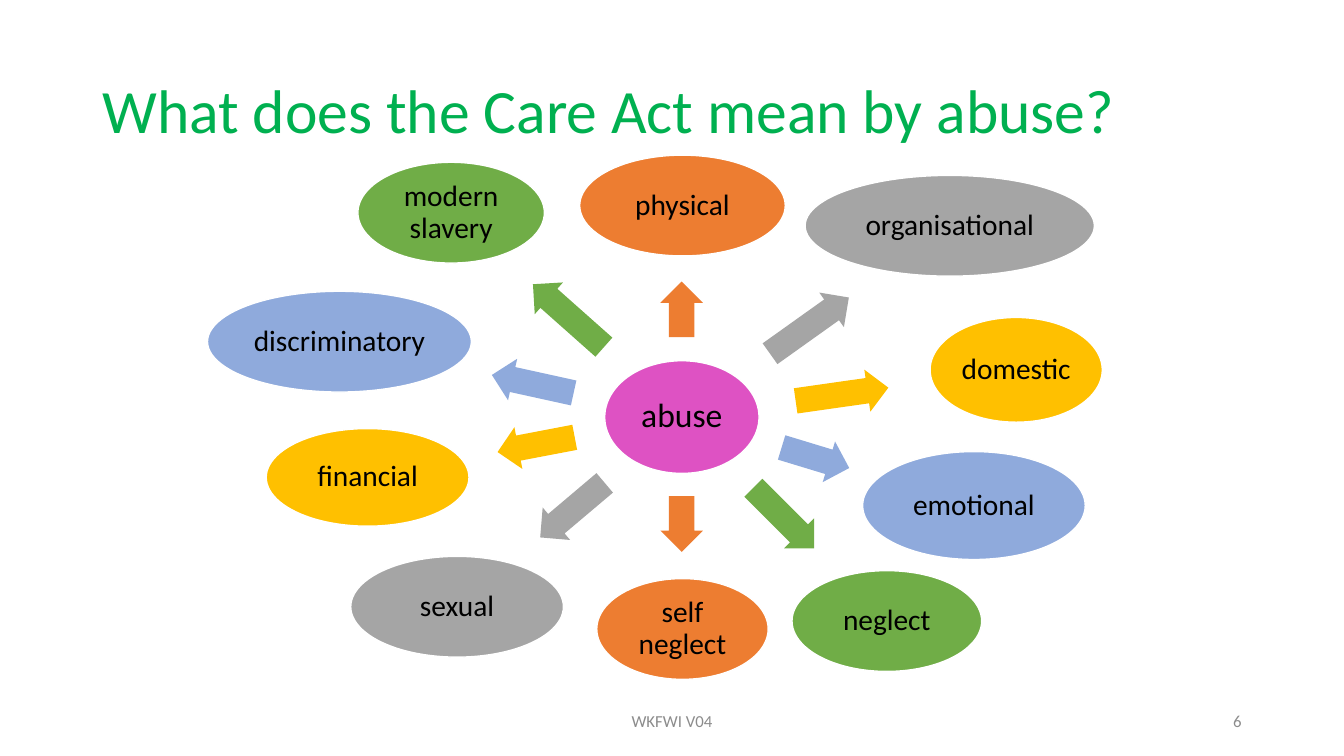
"""Build a slide of the kinds of abuse around a central oval."""
from dataclasses import dataclass
from itertools import cycle

from pptx import Presentation
from pptx.dml.color import RGBColor
from pptx.enum.shapes import MSO_SHAPE
from pptx.enum.text import MSO_ANCHOR, PP_ALIGN
from pptx.util import Cm, Pt

OVAL = MSO_SHAPE.OVAL
ARROW = MSO_SHAPE.RIGHT_ARROW
MIDDLE = MSO_ANCHOR.MIDDLE
LEFT, CENTER, RIGHT = PP_ALIGN.LEFT, PP_ALIGN.CENTER, PP_ALIGN.RIGHT

FONT = "Calibri"
BLACK, WHITE, GREY = "000000", "FFFFFF", "8C8C8C"
HUES = ("ED7D31", "A5A5A5", "FFC000", "8FAADC", "70AD47")
INSET = 0.08
THICK = 1.07


@dataclass
class Oval:
    text: str
    x: float
    y: float
    w: float
    h: float = 2.54
    size: int = 21


@dataclass
class Arrow:
    x: float
    y: float
    length: float
    turn: float


@dataclass
class Label:
    text: str
    x: float
    y: float
    w: float
    h: float
    size: int
    hue: str
    align: PP_ALIGN
    spacing: float = 1.0


HUB = Oval("abuse", 15.24, 9.09, 3.89, 2.84, 24)
SPOKES = (
    (Oval("physical", 14.61, 3.91, 5.18), Arrow(16.48, 7.26, 1.4, 270)),
    (Oval("organisational", 20.29, 4.42, 7.29), Arrow(19.18, 7.67, 2.44, 324.5)),
    (Oval("domestic", 23.44, 8, 4.34, 2.64), Arrow(20.04, 9.4, 2.36, 351.9)),
    (Oval("emotional", 21.74, 11.38, 5.61, 2.72), Arrow(19.66, 11, 1.78, 16.9)),
    (Oval("neglect", 19.96, 14.38, 4.78), Arrow(18.67, 12.52, 2.16, 44.9)),
    (Oval("self neglect", 15.04, 14.58, 4.32), Arrow(16.48, 12.67, 1.4, 90)),
    (Oval("sexual", 8.84, 14.02, 5.36), Arrow(13.36, 12.32, 2.13, 139.8)),
    (Oval("financial", 6.71, 10.8, 5.11, 2.46), Arrow(12.52, 10.67, 1.98, 169.2)),
    (Oval("discriminatory", 5.23, 7.34, 6.65), Arrow(12.37, 9.14, 2.11, 192.4)),
    (Oval("modern slavery", 9.02, 4.09, 4.7), Arrow(13.13, 7.42, 2.39, 221.6)),
)
LABELS = (
    Label("What does the Care Act mean by abuse?", 2.33, 1.01, 29.21, 3.68,
          44, "00B050", LEFT, 0.9),
    Label("WKFWI V04", 11.22, 17.66, 11.43, 1.01, 12, GREY, CENTER),
    Label("6", 23.92, 17.66, 7.62, 1.01, 12, GREY, RIGHT),
)


def color(code: str) -> RGBColor:
    return RGBColor.from_string(code)


def write(frame, text: str, size: int, hue: str, align: PP_ALIGN,
          spacing: float) -> None:
    frame.word_wrap = True
    frame.vertical_anchor = MIDDLE
    line = frame.paragraphs[0]
    line.text = text
    line.alignment = align
    line.line_spacing = spacing
    line.font.name = FONT
    line.font.size = Pt(size)
    line.font.color.rgb = color(hue)


def draw_oval(slide, oval: Oval, hue: str) -> None:
    shape = slide.shapes.add_shape(
        OVAL, Cm(oval.x), Cm(oval.y), Cm(oval.w), Cm(oval.h))
    shape.shadow.inherit = False
    shape.fill.solid()
    shape.fill.fore_color.rgb = color(hue)
    shape.line.color.rgb = color(WHITE)
    shape.line.width = Pt(1)
    frame = shape.text_frame
    frame.margin_left = frame.margin_right = Cm(INSET)
    frame.margin_top = frame.margin_bottom = Cm(INSET)
    write(frame, oval.text, oval.size, BLACK, CENTER, 0.9)


def draw_arrow(slide, arrow: Arrow, hue: str) -> None:
    shape = slide.shapes.add_shape(
        ARROW, Cm(arrow.x), Cm(arrow.y), Cm(arrow.length), Cm(THICK))
    shape.adjustments[0] = 0.6
    shape.adjustments[1] = 0.5
    shape.rotation = arrow.turn
    shape.shadow.inherit = False
    shape.fill.solid()
    shape.fill.fore_color.rgb = color(hue)
    shape.line.fill.background()


def draw_label(slide, label: Label) -> None:
    box = slide.shapes.add_textbox(
        Cm(label.x), Cm(label.y), Cm(label.w), Cm(label.h))
    write(box.text_frame, label.text, label.size, label.hue, label.align,
          label.spacing)


def main() -> None:
    deck = Presentation()
    deck.slide_width, deck.slide_height = Cm(33.87), Cm(19.05)
    slide = deck.slides.add_slide(deck.slide_layouts[6])
    for label in LABELS:
        draw_label(slide, label)
    draw_oval(slide, HUB, "DE52C3")
    for (oval, arrow), hue in zip(SPOKES, cycle(HUES)):
        draw_arrow(slide, arrow, hue)
        draw_oval(slide, oval, hue)
    deck.save("out.pptx")


if __name__ == "__main__":
    main()
